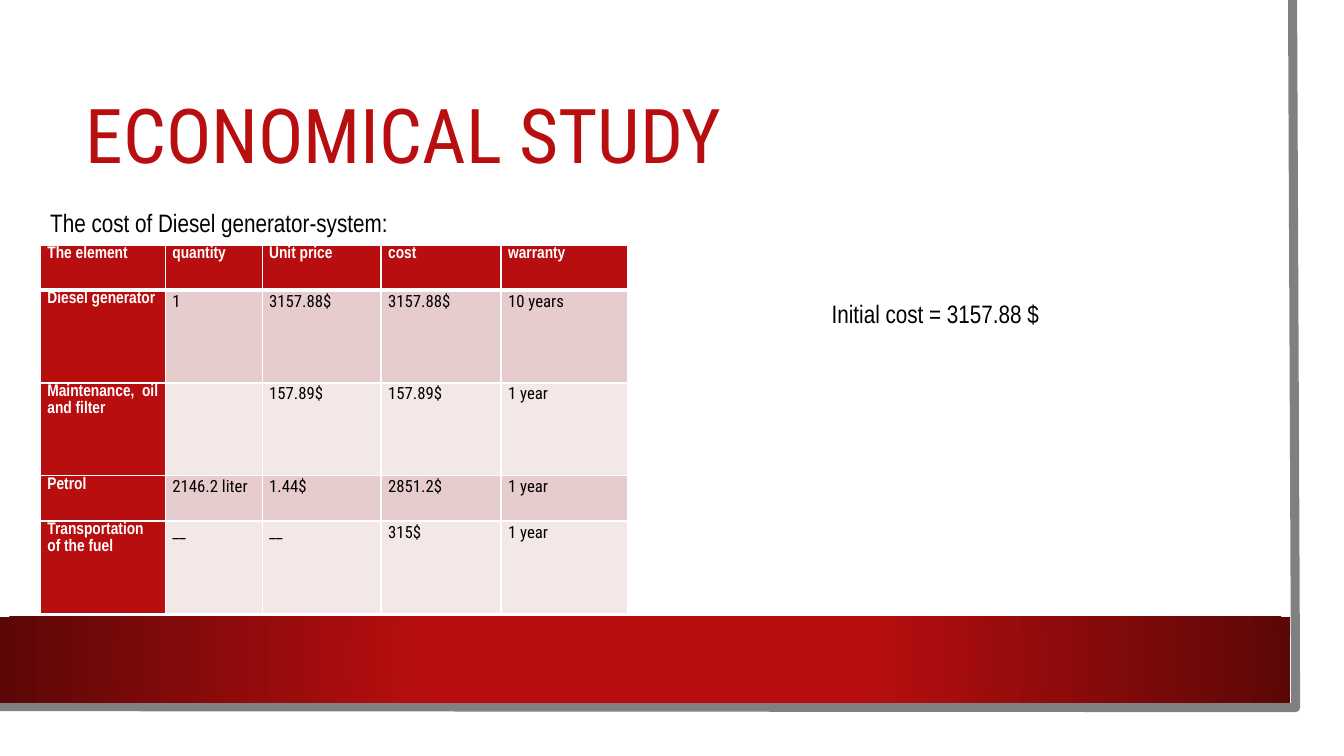
from lxml import etree
from pptx import Presentation
from pptx.dml.color import RGBColor
from pptx.enum.shapes import MSO_SHAPE as Shape
from pptx.enum.text import MSO_ANCHOR as Anchor, MSO_AUTO_SIZE as AutoSize, PP_ALIGN as Align
from pptx.oxml import parse_xml
from pptx.oxml.ns import nsdecls, qn
from pptx.util import Inches, Pt

RED, DARK_RED, WHITE, BLACK, GRAY = "B80E0F", "5C0707", "FFFFFF", "000000", "808080"
BANDS = ("E6CCCC", "F3E7E7")
NARROW, CONDENSED = "Arial Narrow", "Roboto Condensed"

COLUMN_WIDTHS = (1.24, 0.96, 1.18, 1.19, 1.26)
ROW_HEIGHTS = (0.45, 0.92, 0.92, 0.45, 0.92)
COSTS = (
    ("The element", "quantity", "Unit price", "cost", "warranty"),
    ("Diesel generator", "1", "3157.88$", "3157.88$", "10 years"),
    ("Maintenance, oil and filter", "", "157.89$", "157.89$", "1 year"),
    ("Petrol", "2146.2 liter", "1.44$", "2851.2$", "1 year"),
    ("Transportation of the fuel", "__", "__", "315$", "1 year"),
)


def color(value):
    return RGBColor.from_string(value)


def set_attributes(target, values):
    for name, value in values.items():
        setattr(target, name, value)


def write(para, text, size, font, ink, bold=False):
    span = para.add_run()
    span.text = text
    set_attributes(span.font, {"size": Pt(size), "name": font, "bold": bold})
    span.font.color.rgb = color(ink)


def add_rectangle(page, left, top, width, height, fill):
    box = page.shapes.add_shape(
        Shape.RECTANGLE, Inches(left), Inches(top), Inches(width), Inches(height))
    box.shadow.inherit = False
    box.fill.solid()
    box.fill.fore_color.rgb = color(fill)
    box.line.fill.background()
    return box


def add_radial_fill(box, inner, outer):
    gradient = parse_xml(
        f'<a:gradFill {nsdecls("a")} rotWithShape="1"><a:gsLst>'
        f'<a:gs pos="34000"><a:srgbClr val="{inner}"/></a:gs>'
        f'<a:gs pos="100000"><a:srgbClr val="{outer}"/></a:gs></a:gsLst>'
        '<a:path path="circle"><a:fillToRect l="50000" t="50000" r="50000" b="50000"/>'
        '</a:path></a:gradFill>')
    solid = box.element.spPr.find(qn("a:solidFill"))
    solid.getparent().replace(solid, gradient)


def add_edge(page):
    builder = page.shapes.build_freeform(Inches(12.82), 0)
    corners = [(Inches(12.85), Inches(7.02)), (Inches(-0.03), Inches(7.01))]
    builder.add_line_segments(corners, close=False)
    edge = builder.convert_to_shape()
    edge.shadow.inherit = False
    edge.fill.background()
    edge.line.color.rgb = color(GRAY)
    edge.line.width = Pt(6.5)


def add_title(page, text):
    title = page.shapes.title
    page.shapes.element.append(title.element)  # in front of the backdrop
    set_attributes(title, {"left": Inches(0.75), "top": Inches(0.75),
                           "width": Inches(11.37), "height": Inches(1.26)})
    title.text_frame.vertical_anchor = Anchor.MIDDLE
    para = title.text_frame.paragraphs[0]
    set_attributes(para, {"alignment": Align.LEFT, "line_spacing": 0.9})
    write(para, text, 54, CONDENSED, RED)


def add_label(page, left, top, width, text):
    box = page.shapes.add_textbox(Inches(left), Inches(top), Inches(width), Inches(0.4))
    set_attributes(box.text_frame, {"word_wrap": True, "auto_size": AutoSize.SHAPE_TO_FIT_TEXT})
    write(box.text_frame.paragraphs[0], text, 18, NARROW, BLACK)


def set_borders(cell, widths):
    properties = cell._tc.get_or_add_tcPr()
    for index, (side, width) in enumerate(widths.items()):
        line = etree.Element(qn(f"a:ln{side}"), w=str(Pt(width)))
        fill = etree.SubElement(line, qn("a:solidFill"))
        etree.SubElement(fill, qn("a:srgbClr"), val=WHITE)
        properties.insert(index, line)


def format_cell(cell, text, row, column):
    heading = row == 0 or column == 0
    set_attributes(cell, {"margin_left": Inches(0.07), "margin_right": Inches(0.07),
                          "margin_top": 0, "margin_bottom": 0})
    cell.fill.solid()
    cell.fill.fore_color.rgb = color(RED if heading else BANDS[(row - 1) % 2])
    set_borders(cell, {"L": 1, "R": 1, "T": 3 if row == 1 else 1, "B": 3 if row == 0 else 1})
    if text:
        para = cell.text_frame.paragraphs[0]
        set_attributes(para, {"alignment": Align.JUSTIFY, "line_spacing": 1.07})
        font, ink = (NARROW, WHITE) if heading else (CONDENSED, BLACK)
        write(para, text, 12, font, ink, bold=heading)


def add_cost_table(page, left, top):
    table = page.shapes.add_table(
        len(COSTS), len(COLUMN_WIDTHS), Inches(left), Inches(top),
        Inches(sum(COLUMN_WIDTHS)), Inches(sum(ROW_HEIGHTS))).table
    for column, width in zip(table.columns, COLUMN_WIDTHS):
        column.width = Inches(width)
    for row, height in zip(table.rows, ROW_HEIGHTS):
        row.height = Inches(height)
    for row, texts in enumerate(COSTS):
        for column, text in enumerate(texts):
            format_cell(table.cell(row, column), text, row, column)


def main():
    deck = Presentation()
    set_attributes(deck, {"slide_width": Inches(13.33), "slide_height": Inches(7.5)})
    page = deck.slides.add_slide(deck.slide_layouts[5])

    # Backdrop: sheet, gray edge and red band
    add_rectangle(page, 0, 0, 13.1, 7.27, WHITE)
    add_edge(page)
    band = add_rectangle(page, 0, 6.12, 12.8, 0.85, RED)
    add_radial_fill(band, RED, DARK_RED)

    # Content
    add_title(page, "ECONOMICAL STUDY")
    add_label(page, 0.4, 2.01, 6.8, "The cost of Diesel generator-system:")
    add_label(page, 8.15, 2.91, 2.48, "Initial cost = 3157.88 $")
    add_cost_table(page, 0.4, 2.43)

    deck.save("out.pptx")


if __name__ == "__main__":
    main()
